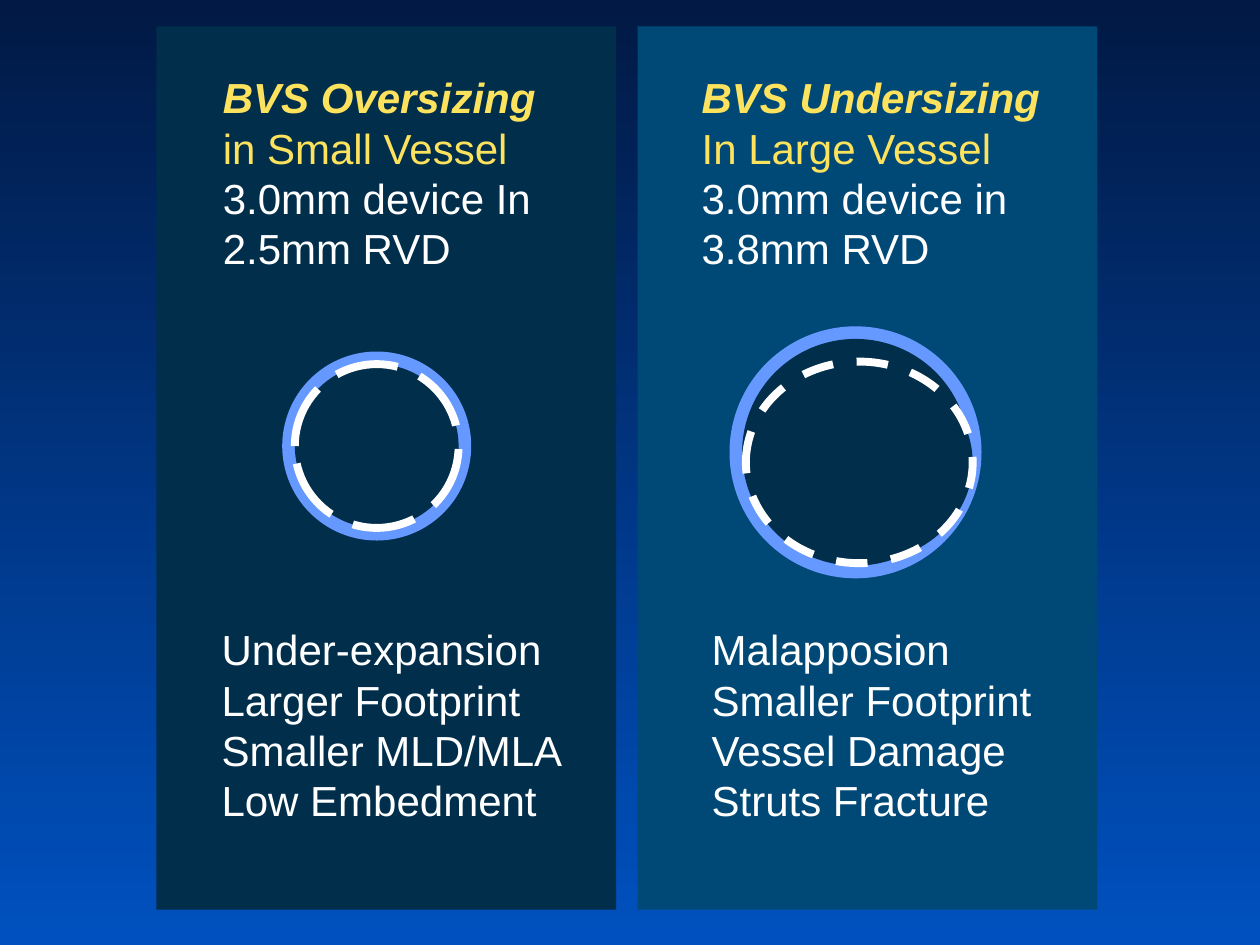
from pptx import Presentation
from pptx.dml.color import RGBColor
from pptx.enum.dml import MSO_LINE
from pptx.enum.shapes import MSO_SHAPE
from pptx.enum.text import MSO_AUTO_SIZE
from pptx.util import Inches, Pt

RECT, OVAL = MSO_SHAPE.RECTANGLE, MSO_SHAPE.OVAL
DASH, LONG_DASH = MSO_LINE.DASH, MSO_LINE.LONG_DASH
GROW = MSO_AUTO_SIZE.SHAPE_TO_FIT_TEXT

NIGHT = RGBColor(0x01, 0x19, 0x44)
ROYAL = RGBColor(0x00, 0x51, 0xBF)
NAVY = RGBColor(0x00, 0x2E, 0x4B)
TEAL = RGBColor(0x00, 0x49, 0x76)
VESSEL = RGBColor(0x66, 0x99, 0xFF)
YELLOW = RGBColor(0xFD, 0xE2, 0x5E)
WHITE = RGBColor(0xFF, 0xFF, 0xFF)

PANEL_TOP, PANEL_W, PANEL_H = 0.21, 3.65, 7.01
HEADING_TOP, EFFECTS_TOP, TEXT_H = 0.52, 4.9, 1.72


class SlideBuilder:
    font_name = "Arial"
    font_size = Pt(24)
    dash_width = Pt(4.5)

    def __init__(self, slide):
        self.slide = slide
        self.shapes = slide.shapes

    def background(self, top, bottom):
        fill = self.slide.background.fill
        fill.gradient()
        fill.gradient_angle = 270
        for stop, color, position in zip(fill.gradient_stops, (top, bottom), (0, 1)):
            stop.color.rgb = color
            stop.position = position

    def start_group(self):
        self.shapes = self.slide.shapes.add_group_shape().shapes

    def shape(self, kind, x, y, w, h, fill, dash=None):
        sp = self.shapes.add_shape(kind, Inches(x), Inches(y), Inches(w), Inches(h))
        sp.shadow.inherit = False
        sp.fill.solid()
        sp.fill.fore_color.rgb = fill
        if dash is None:
            sp.line.fill.background()
        else:
            sp.line.color.rgb = WHITE
            sp.line.width = self.dash_width
            sp.line.dash_style = dash

    def panel(self, x, fill):
        self.shape(RECT, x, PANEL_TOP, PANEL_W, PANEL_H, fill)

    def text(self, x, y, w, paragraphs):
        """Each paragraph is a list of (text, color, emphasised) runs."""
        box = self.shapes.add_textbox(Inches(x), Inches(y), Inches(w), Inches(TEXT_H))
        tf = box.text_frame
        tf.word_wrap = True
        tf.auto_size = GROW
        for i, runs in enumerate(paragraphs):
            p = tf.paragraphs[0] if i == 0 else tf.add_paragraph()
            p.font.name = self.font_name
            p.font.size = self.font_size
            for text, color, emphasised in runs:
                r = p.add_run()
                r.text = text
                r.font.color.rgb = color
                if emphasised:
                    r.font.bold = r.font.italic = True

    def plain_text(self, x, y, w, lines):
        self.text(x, y, w, [[(line, WHITE, False)] for line in lines])


def main():
    prs = Presentation()
    prs.slide_width, prs.slide_height = Inches(10), Inches(7.5)
    s = SlideBuilder(prs.slides.add_slide(prs.slide_layouts[6]))
    s.background(NIGHT, ROYAL)

    # Left panel: device too large for the vessel
    s.panel(1.24, NAVY)
    s.text(1.67, HEADING_TOP, 2.7, [
        [("BVS Oversizing ", YELLOW, True), ("in Small Vessel", YELLOW, False)],
        [("3.0mm device In 2.5mm RVD", WHITE, False)],
    ])
    s.shape(OVAL, 2.24, 2.79, 1.5, 1.5, VESSEL)
    s.shape(OVAL, 2.34, 2.89, 1.3, 1.3, NAVY, LONG_DASH)
    s.plain_text(1.66, EFFECTS_TOP, 2.95, [
        "Under-expansion Larger Footprint", "Smaller MLD/MLA", "Low Embedment"])

    # Right panel: device too small for the vessel
    s.start_group()
    s.panel(5.06, TEAL)
    s.shape(OVAL, 5.79, 2.59, 2, 2, VESSEL)
    s.shape(OVAL, 5.89, 2.69, 1.8, 1.8, NAVY)
    s.shape(OVAL, 5.92, 2.87, 1.8, 1.6, NAVY, DASH)
    s.plain_text(5.55, EFFECTS_TOP, 3.06, [
        "Malapposion", "Smaller Footprint", "Vessel Damage", "Struts Fracture"])
    s.text(5.47, HEADING_TOP, 2.89, [
        [("BVS Undersizing", YELLOW, True)],
        [("In Large Vessel", YELLOW, False)],
        [("3.0mm device in", WHITE, False)],
        [("3.8mm RVD", WHITE, False)],
    ])

    prs.save("out.pptx")


if __name__ == "__main__":
    main()
